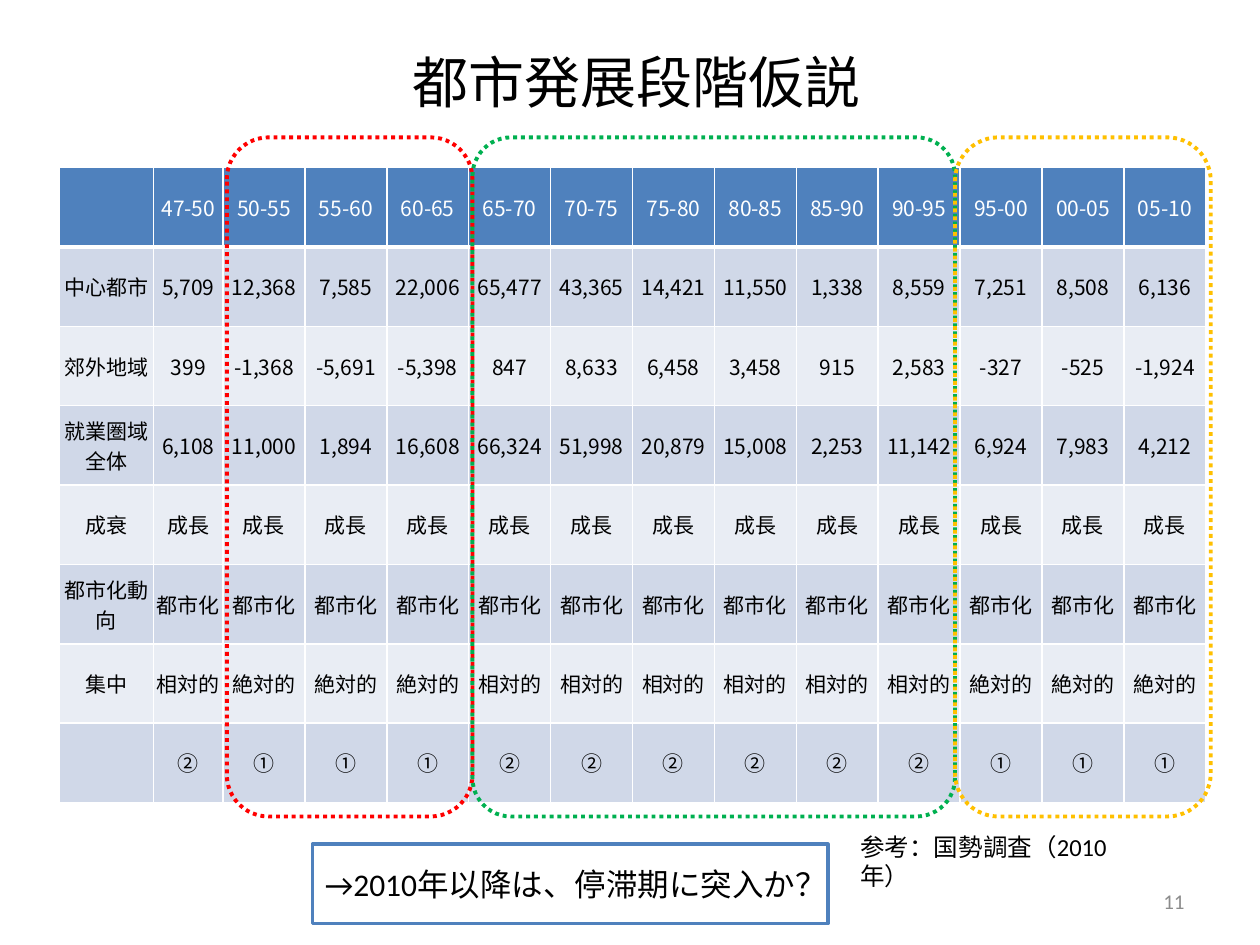
from lxml import etree
from pptx import Presentation
from pptx import util as u
from pptx.dml.color import RGBColor
from pptx.enum import dml, shapes, text
from pptx.oxml.ns import qn

TITLE = "都市発展段階仮説"
PERIODS = ["47-50", "50-55", "55-60", "60-65", "65-70", "70-75", "75-80",
           "80-85", "85-90", "90-95", "95-00", "00-05", "05-10"]
CENTRAL = [5709, 12368, 7585, 22006, 65477, 43365, 14421, 11550, 1338, 8559, 7251, 8508, 6136]
SUBURB = [399, -1368, -5691, -5398, 847, 8633, 6458, 3458, 915, 2583, -327, -525, -1924]
WHOLE = [6108, 11000, 1894, 16608, 66324, 51998, 20879, 15008, 2253, 11142, 6924, 7983, 4212]
STAGES = [2, 1, 1, 1, 2, 2, 2, 2, 2, 2, 1, 1, 1]
CONCENTRATION = {1: "絶対的", 2: "相対的"}
STAGE_MARKS = {1: "①", 2: "②"}
CONCLUSION = "→2010年以降は、停滞期に突入か？"
REFERENCE = "参考：国勢調査（2010年）"
PAGE_NUMBER = "11"

BLACK = RGBColor(0x00, 0x00, 0x00)
WHITE = RGBColor(0xFF, 0xFF, 0xFF)
GRAY = RGBColor(0x8C, 0x8C, 0x8C)
BLUE = RGBColor(0x4F, 0x81, 0xBD)
BAND_DARK = RGBColor(0xD0, 0xD8, 0xE8)
BAND_LIGHT = RGBColor(0xE9, 0xED, 0xF4)
RED = RGBColor(0xFF, 0x00, 0x00)
GREEN = RGBColor(0x00, 0xB0, 0x50)
YELLOW = RGBColor(0xFF, 0xC0, 0x00)

TABLE_LEFT, TABLE_TOP = 0.47, 1.33
COLUMN_WIDTHS = [0.75, 0.55] + [0.65] * 12
ROW_HEIGHT = 0.63
FRAME_TOP, FRAME_HEIGHT = 1.09, 5.39
FRAMES = [(1.80, 3.75, 0.17, RED), (3.75, 7.58, 0.08, GREEN), (7.58, 9.61, 0.17, YELLOW)]

ROWS = [
    [""] + PERIODS,
    ["中心都市"] + [f"{value:,}" for value in CENTRAL],
    ["郊外地域"] + [f"{value:,}" for value in SUBURB],
    ["就業圏域全体"] + [f"{value:,}" for value in WHOLE],
    ["成衰"] + ["成長"] * len(PERIODS),
    ["都市化動向"] + ["都市化"] * len(PERIODS),
    ["集中"] + [CONCENTRATION[stage] for stage in STAGES],
    [""] + [STAGE_MARKS[stage] for stage in STAGES],
]


def box(left, top, width, height):
    return [u.Inches(value) for value in (left, top, width, height)]


def write(frame, words, size, color, align, font="Calibri"):
    frame.word_wrap = True
    frame.vertical_anchor = text.MSO_ANCHOR.MIDDLE
    paragraph = frame.paragraphs[0]
    paragraph.alignment = align
    run = paragraph.add_run()
    run.text = words
    for name, value in {"size": u.Pt(size), "name": font, "bold": False}.items():
        setattr(run.font, name, value)
    run.font.color.rgb = color


def add_borders(cell, points):
    properties = cell._tc.get_or_add_tcPr()
    for index, (side, width) in enumerate(points.items()):
        line = etree.Element(qn(f"a:ln{side}"), w=str(u.Pt(width)))
        fill = etree.SubElement(line, qn("a:solidFill"))
        etree.SubElement(fill, qn("a:srgbClr"), val=str(WHITE))
        properties.insert(index, line)


def add_table(slide):
    area = box(TABLE_LEFT, TABLE_TOP, sum(COLUMN_WIDTHS), ROW_HEIGHT * len(ROWS))
    table = slide.shapes.add_table(len(ROWS), len(COLUMN_WIDTHS), *area).table
    for column, width in zip(table.columns, COLUMN_WIDTHS):
        column.width = u.Inches(width)
    for row_index, words_row in enumerate(ROWS):
        table.rows[row_index].height = u.Inches(ROW_HEIGHT)
        header = row_index == 0
        band = BLUE if header else (BAND_LIGHT, BAND_DARK)[row_index % 2]
        borders = {"L": 1, "R": 1, "T": 3 if row_index == 1 else 1, "B": 3 if header else 1}
        for column_index, words in enumerate(words_row):
            cell = table.cell(row_index, column_index)
            cell.fill.solid()
            cell.fill.fore_color.rgb = band
            for side in ("left", "right", "top", "bottom"):
                setattr(cell, f"margin_{side}", 0)
            cell.vertical_anchor = text.MSO_ANCHOR.MIDDLE
            if words:
                write(cell.text_frame, words, 12, WHITE if header else BLACK,
                      text.PP_ALIGN.CENTER, "Noto Sans CJK JP")
                cell.vertical_anchor = text.MSO_ANCHOR.MIDDLE
            add_borders(cell, borders)


def add_outlined(slide, kind, area, color, points):
    shape = slide.shapes.add_shape(kind, *box(*area))
    shape.shadow.inherit = False
    shape.fill.background()
    shape.line.color.rgb = color
    shape.line.width = u.Pt(points)
    return shape


def main():
    presentation = Presentation()
    presentation.slide_width, presentation.slide_height = u.Inches(10), u.Inches(7.5)
    slide = presentation.slides.add_slide(presentation.slide_layouts[5])

    title = slide.shapes.title
    title.left, title.top, title.width, title.height = box(0.55, 0.29, 9, 0.71)
    write(title.text_frame, TITLE, 32, BLACK, text.PP_ALIGN.CENTER)

    number = slide.shapes.add_textbox(*box(7.17, 6.95, 2.33, 0.4))
    write(number.text_frame, PAGE_NUMBER, 12, GRAY, text.PP_ALIGN.RIGHT)

    add_table(slide)

    conclusion = add_outlined(slide, shapes.MSO_SHAPE.RECTANGLE, (2.48, 6.7, 4.09, 0.63), BLUE, 2)
    conclusion.fill.solid()
    conclusion.fill.fore_color.rgb = WHITE
    write(conclusion.text_frame, CONCLUSION, 18, BLACK, text.PP_ALIGN.LEFT)

    for left, right, rounding, color in FRAMES:
        area = (left, FRAME_TOP, right - left, FRAME_HEIGHT)
        frame = add_outlined(slide, shapes.MSO_SHAPE.ROUNDED_RECTANGLE, area, color, 2.25)
        frame.adjustments[0] = rounding
        frame.line.dash_style = dml.MSO_LINE.ROUND_DOT

    reference = slide.shapes.add_textbox(*box(6.73, 6.65, 2.27, 0.37))
    write(reference.text_frame, REFERENCE, 14, BLACK, text.PP_ALIGN.LEFT)

    presentation.save("out.pptx")


if __name__ == "__main__":
    main()
